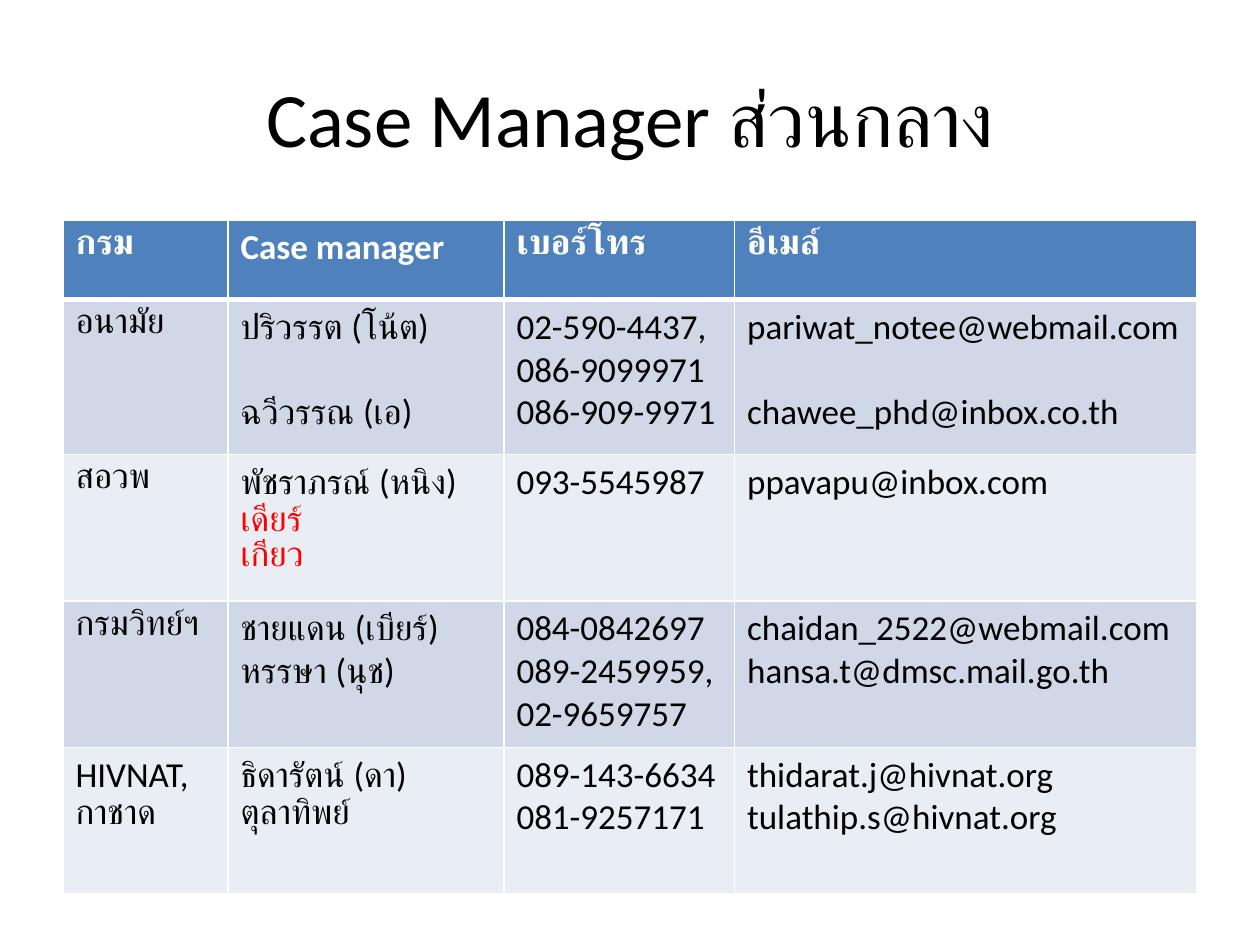
from lxml import etree
from pptx import Presentation
from pptx import util as u
from pptx.dml.color import RGBColor
from pptx.enum import text
from pptx.oxml import ns

WIDTH, HEIGHT = u.Inches(10), u.Inches(7.5)
MARGIN = 0.05  # share of the slide width
COLUMNS = (0.131, 0.219, 0.183, 0.367)  # shares of the slide width
ROWS = (0.084, 0.164, 0.155, 0.155, 0.155)  # shares of the slide height
FONT = "Calibri"
BODY_SIZE = 20
LINE_GAP = 24.4  # one body line, in points

BLACK = RGBColor(0x00, 0x00, 0x00)
WHITE = RGBColor(0xFF, 0xFF, 0xFF)
RED = RGBColor(0xFF, 0x00, 0x00)
BLUE = RGBColor(0x4F, 0x81, 0xBD)
BANDS = (RGBColor(0xD0, 0xD8, 0xE8), RGBColor(0xE9, 0xED, 0xF4))

HEADINGS = ("กรม", "Case manager", "เบอร์โทร", "อีเมล์")
CONTACTS = (
    (["อนามัย"], ["ปริวรรต (โน้ต)", "ฉวีวรรณ (เอ)"],
     ["02-590-4437, 086-9099971", "086-909-9971"],
     ["pariwat_notee@webmail.com", "chawee_phd@inbox.co.th"]),
    (["สอวพ"], ["พัชราภรณ์ (หนิง)", "เดียร์", "เกียว"],
     ["093-5545987"], ["ppavapu@inbox.com"]),
    (["กรมวิทย์ฯ"], ["ชายแดน (เบียร์)", "หรรษา (นุช)"],
     ["084-0842697", "089-2459959,", "02-9659757"],
     ["chaidan_2522@webmail.com", "hansa.t@dmsc.mail.go.th"]),
    (["HIVNAT, กาชาด"], ["ธิดารัตน์ (ดา)", "ตุลาทิพย์"],
     ["089-143-6634", "081-9257171"],
     ["thidarat.j@hivnat.org", "tulathip.s@hivnat.org"]),
)
RED_NAMES = {"เดียร์", "เกียว"}
# Lines set one line lower, level with the second phone number
LOWERED = {"ฉวีวรรณ (เอ)", "chawee_phd@inbox.co.th"}


def style(para, size, color, bold=False):
    font = para.font
    font.name, font.size, font.bold = FONT, u.Pt(size), bold
    font.color.rgb = color


def add_title(page, words):
    box = page.shapes.add_textbox(
        int(WIDTH * MARGIN), int(HEIGHT * 0.04),
        int(WIDTH * (1 - 2 * MARGIN)), int(HEIGHT / 6))
    frame = box.text_frame
    frame.word_wrap = True
    frame.vertical_anchor = text.MSO_ANCHOR.MIDDLE
    para = frame.paragraphs[0]
    para.text = words
    para.alignment = text.PP_ALIGN.CENTER
    style(para, 44, BLACK)


def set_borders(cell, color, bottom):
    """Draw 1 pt borders, with the bottom one at its own width."""
    properties = cell._tc.get_or_add_tcPr()
    for place, side in enumerate("LRTB"):
        width = u.Pt(bottom if side == "B" else 1)
        line = etree.Element(ns.qn(f"a:ln{side}"), w=str(width))
        fill = etree.SubElement(line, ns.qn("a:solidFill"))
        etree.SubElement(fill, ns.qn("a:srgbClr"), val=str(color))
        properties.insert(place, line)


def fill_cell(cell, lines, fill, header=False):
    cell.fill.solid()
    cell.fill.fore_color.rgb = fill
    set_borders(cell, WHITE, 3 if header else 1)
    frame = cell.text_frame
    frame.text = "\n".join(lines)
    for para, line in zip(frame.paragraphs, lines):
        color = WHITE if header else RED if line in RED_NAMES else BLACK
        style(para, BODY_SIZE, color, header)
        if line in LOWERED:
            para.space_before = u.Pt(LINE_GAP)


def add_contacts(page):
    frame = page.shapes.add_table(
        len(ROWS), len(COLUMNS), int(WIDTH * MARGIN), int(HEIGHT * 0.233),
        int(WIDTH * sum(COLUMNS)), int(HEIGHT * sum(ROWS)))
    table = frame.table
    for column, share in zip(table.columns, COLUMNS):
        column.width = int(WIDTH * share)
    for row, share in zip(table.rows, ROWS):
        row.height = int(HEIGHT * share)
    for col, heading in enumerate(HEADINGS):
        fill_cell(table.cell(0, col), [heading], BLUE, header=True)
    for row, contact in enumerate(CONTACTS):
        for col, lines in enumerate(contact):
            fill_cell(table.cell(row + 1, col), lines, BANDS[row % 2])


def main():
    deck = Presentation()
    deck.slide_width, deck.slide_height = WIDTH, HEIGHT
    page = deck.slides.add_slide(deck.slide_layouts[6])
    add_title(page, "Case Manager ส่วนกลาง")
    add_contacts(page)
    deck.save("out.pptx")


if __name__ == "__main__":
    main()
